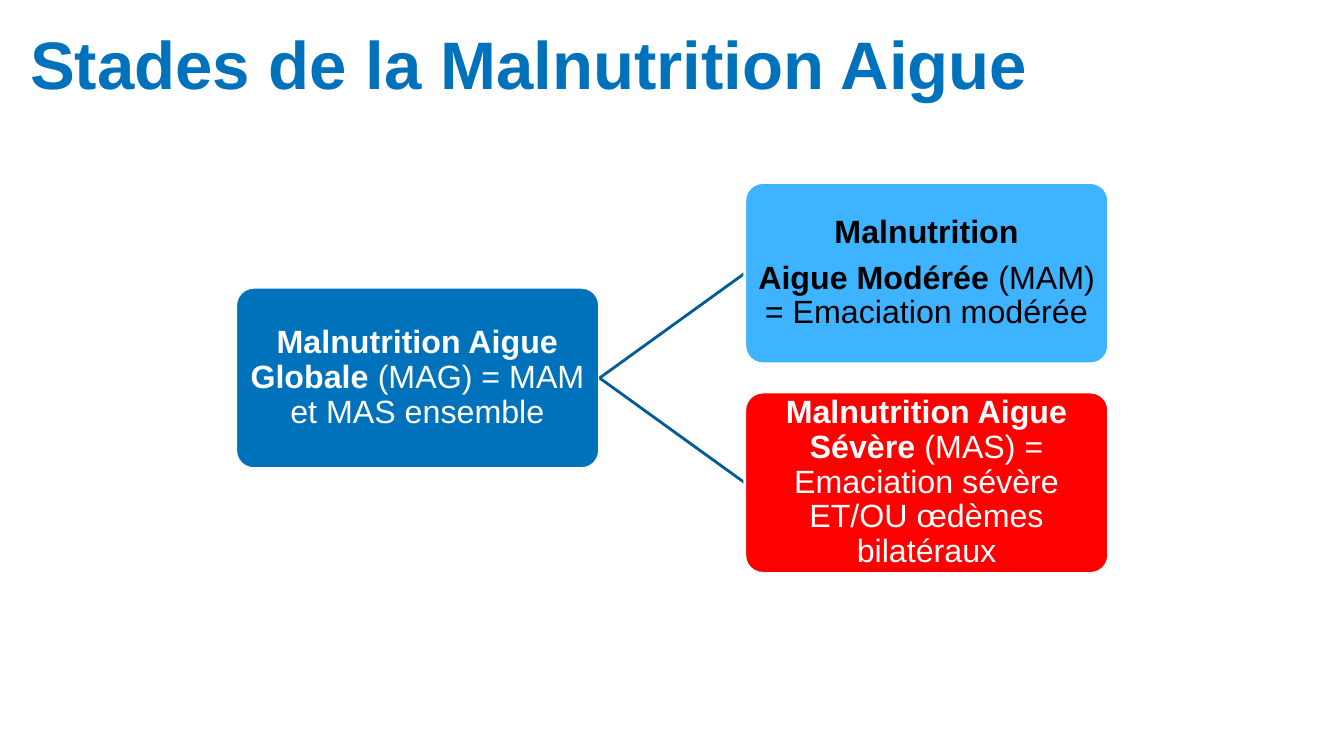
from dataclasses import dataclass

import pptx
import pptx.dml.color
import pptx.enum.shapes
import pptx.enum.text
import pptx.oxml
import pptx.oxml.ns
import pptx.util
from pptx.util import Cm


@dataclass(frozen=True)
class Theme:
    font: str = "Arial"
    title_size: int = 48
    box_size: int = 23
    line_width: int = 2
    blue: str = "0072BC"
    light_blue: str = "3EB3FF"
    red: str = "FF0000"
    link: str = "005B97"
    white: str = "FFFFFF"
    black: str = "000000"


THEME = Theme()
SLIDE_WIDTH, SLIDE_HEIGHT = 33.87, 19.05
BOX_WIDTH, BOX_HEIGHT = 9.17, 4.57
GLOBAL_LEFT, STAGE_LEFT = 5.94, 18.77
STAGE_GAP = 0.71
MIDDLE = SLIDE_HEIGHT / 2

GLOBAL_TEXT = [[("Malnutrition Aigue Globale ", True),
                ("(MAG) = MAM et MAS ensemble", False)]]
MODERATE_TEXT = [[("Malnutrition", True)],
                 [("Aigue Modérée ", True),
                  ("(MAM) = Emaciation modérée", False)]]
SEVERE_TEXT = [[("Malnutrition Aigue Sévère ", True),
                ("(MAS) = Emaciation sévère ET/OU œdèmes bilatéraux", False)]]


def rgb(code):
    return pptx.dml.color.RGBColor.from_string(code)


def set_margins(frame, margin):
    frame.margin_left = frame.margin_right = margin
    frame.margin_top = frame.margin_bottom = margin


def style_paragraph(paragraph, size, color):
    paragraph.line_spacing = 0.9
    paragraph.font.name = THEME.font
    paragraph.font.size = pptx.util.Pt(size)
    paragraph.font.color.rgb = rgb(color)


def add_title(slide, text):
    box = slide.shapes.add_textbox(Cm(0.76), Cm(0.33), Cm(32.44), Cm(2.29))
    frame = box.text_frame
    frame.word_wrap = True
    frame.vertical_anchor = pptx.enum.text.MSO_ANCHOR.BOTTOM
    set_margins(frame, 0)
    paragraph = frame.paragraphs[0]
    paragraph.text = text
    style_paragraph(paragraph, THEME.title_size, THEME.blue)
    paragraph.font.bold = True


def add_box(slide, left, center, fill, color, paragraphs):
    """Add a rounded box centred vertically on center; paragraphs hold (text, bold) runs."""
    shape = slide.shapes.add_shape(
        pptx.enum.shapes.MSO_SHAPE.ROUNDED_RECTANGLE,
        Cm(left), Cm(center - BOX_HEIGHT / 2), Cm(BOX_WIDTH), Cm(BOX_HEIGHT))
    shape.adjustments[0] = 0.1
    shape.shadow.inherit = False
    shape.fill.solid()
    shape.fill.fore_color.rgb = rgb(fill)
    shape.line.color.rgb = rgb(THEME.white)
    shape.line.width = pptx.util.Pt(THEME.line_width)
    frame = shape.text_frame
    frame.word_wrap = True
    frame.vertical_anchor = pptx.enum.text.MSO_ANCHOR.MIDDLE
    set_margins(frame, Cm(0.05))
    for index, runs in enumerate(paragraphs):
        paragraph = frame.add_paragraph() if index else frame.paragraphs[0]
        paragraph.alignment = pptx.enum.text.PP_ALIGN.CENTER
        if index:
            paragraph.space_before = pptx.util.Pt(8)
        style_paragraph(paragraph, THEME.box_size, color)
        for text, bold in runs:
            run = paragraph.add_run()
            run.text = text
            run.font.bold = bold


def add_link(slide, center):
    """Join the global box to the stage centred on center."""
    connector = slide.shapes.add_connector(
        pptx.enum.shapes.MSO_CONNECTOR.STRAIGHT,
        Cm(GLOBAL_LEFT + BOX_WIDTH), Cm(MIDDLE), Cm(STAGE_LEFT), Cm(center))
    connector.line.color.rgb = rgb(THEME.link)
    connector.line.width = pptx.util.Pt(THEME.line_width)
    properties = connector._element.spPr
    properties.append(pptx.oxml.parse_xml(
        f"<a:effectLst {pptx.oxml.ns.nsdecls('a')}/>"))


def main():
    presentation = pptx.Presentation()
    presentation.slide_width = Cm(SLIDE_WIDTH)
    presentation.slide_height = Cm(SLIDE_HEIGHT)
    slide = presentation.slides.add_slide(presentation.slide_layouts[6])

    add_title(slide, "Stades de la Malnutrition Aigue")
    add_box(slide, GLOBAL_LEFT, MIDDLE, THEME.blue, THEME.white, GLOBAL_TEXT)
    offset = (BOX_HEIGHT + STAGE_GAP) / 2
    stages = [(MIDDLE - offset, THEME.light_blue, THEME.black, MODERATE_TEXT),
              (MIDDLE + offset, THEME.red, THEME.white, SEVERE_TEXT)]
    for center, fill, color, paragraphs in stages:
        add_link(slide, center)
        add_box(slide, STAGE_LEFT, center, fill, color, paragraphs)

    presentation.save("out.pptx")


if __name__ == "__main__":
    main()
